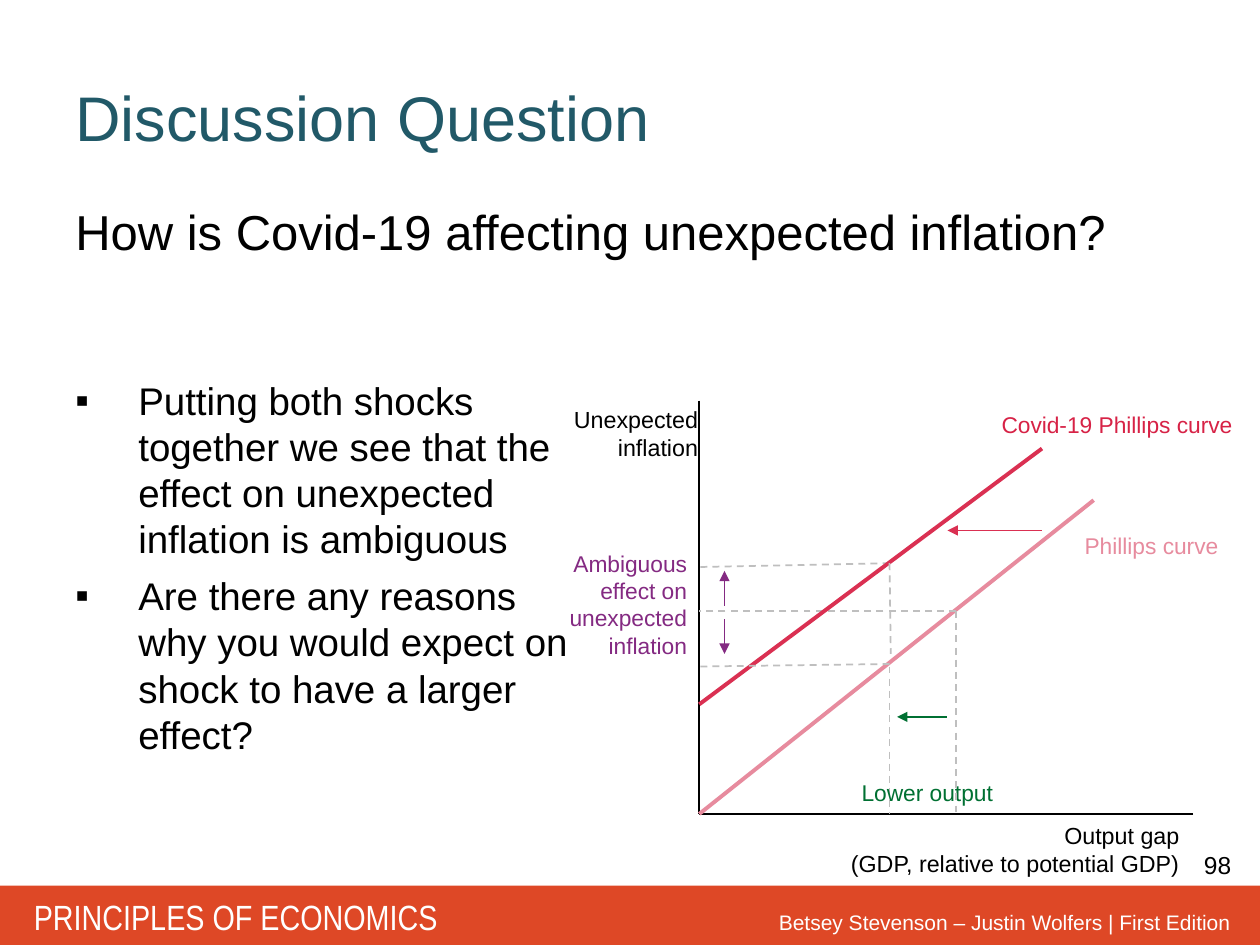
from dataclasses import dataclass
from typing import Optional

from lxml import etree
from pptx import Presentation
from pptx.dml.color import RGBColor
from pptx.enum.dml import MSO_LINE
from pptx.enum.shapes import MSO_CONNECTOR, MSO_SHAPE
from pptx.enum.text import MSO_ANCHOR, PP_ALIGN
from pptx.oxml.ns import qn
from pptx.util import Emu, Inches, Pt

LEFT, RIGHT = PP_ALIGN.LEFT, PP_ALIGN.RIGHT
TOP, MIDDLE = MSO_ANCHOR.TOP, MSO_ANCHOR.MIDDLE
STRAIGHT, RECTANGLE = MSO_CONNECTOR.STRAIGHT, MSO_SHAPE.RECTANGLE
DASH = MSO_LINE.DASH

# The page is a grid of 100 columns by 75 rows.
COLUMNS, ROWS = 100, 75
PAGE_WIDTH, PAGE_HEIGHT = Inches(10), Inches(7.5)

BLACK, WHITE, ORANGE, TEAL = "000000", "FFFFFF", "DE4826", "215968"
CRIMSON, CRIMSON_TEXT, PINK = "DA3052", "D72246", "E78B9E"
GREEN, PURPLE, GREY = "007032", "842A82", "BFBFBF"

# Graph positions, in columns and rows
AXIS_X, AXIS_Y = 55.5, 64.6
LOW_OUTPUT, OLD_OUTPUT = 70.6, 75.9
HIGH_INFLATION, OLD_INFLATION, LOW_INFLATION = 44.7, 48.5, 52.7
ARROW_X = 57.5


@dataclass
class Label:
    column: float
    row: float
    width: float
    height: float
    paragraphs: tuple[str, ...]
    size: float = 13
    color: str = BLACK
    align: PP_ALIGN = LEFT
    anchor: MSO_ANCHOR = TOP
    font: str = "Arial"
    bullet: Optional[str] = None
    right_inset: float = 1


@dataclass
class Line:
    start: tuple[float, float]
    end: tuple[float, float]
    color: str = BLACK
    weight: float = 1
    dashed: bool = False
    arrow: bool = False


def across(columns: float) -> Emu:
    return Emu(round(PAGE_WIDTH * columns / COLUMNS))


def down(rows: float) -> Emu:
    return Emu(round(PAGE_HEIGHT * rows / ROWS))


def rgb(color: str) -> RGBColor:
    return RGBColor.from_string(color)


def add_bullet(para, symbol: str) -> None:
    properties = para._p.get_or_add_pPr()
    properties.set("marL", str(Inches(0.5)))
    properties.set("indent", str(-Inches(0.5)))
    etree.SubElement(properties, qn("a:buFont"), typeface="Arial")
    etree.SubElement(properties, qn("a:buChar"), char=symbol)


def draw_label(page, label: Label) -> None:
    box = page.shapes.add_textbox(across(label.column), down(label.row),
                                  across(label.width), down(label.height))
    frame = box.text_frame
    frame.word_wrap = True
    frame.vertical_anchor = label.anchor
    frame.margin_right = across(label.right_inset)
    for index, text in enumerate(label.paragraphs):
        para = frame.add_paragraph() if index else frame.paragraphs[0]
        para.alignment = label.align
        if label.bullet:
            if index:
                para.space_before = Pt(6.2)
            add_bullet(para, label.bullet)
        span = para.add_run()
        span.text = text
        span.font.name = label.font
        span.font.size = Pt(label.size)
        span.font.color.rgb = rgb(label.color)


def draw_line(page, line: Line) -> None:
    """Draw a straight line; an arrow has its head at the start."""
    connector = page.shapes.add_connector(
        STRAIGHT, across(line.start[0]), down(line.start[1]),
        across(line.end[0]), down(line.end[1]))
    connector.line.color.rgb = rgb(line.color)
    connector.line.width = Pt(line.weight)
    if line.dashed:
        connector.line.dash_style = DASH
    if line.arrow:
        etree.SubElement(connector.line._get_or_add_ln(), qn("a:headEnd"),
                         type="triangle")
    etree.SubElement(connector._element.spPr, qn("a:effectLst"))


def draw_footer_band(page) -> None:
    band = page.shapes.add_shape(RECTANGLE, 0, down(70.3), PAGE_WIDTH, down(4.7))
    band.shadow.inherit = False
    band.fill.solid()
    band.fill.fore_color.rgb = rgb(ORANGE)
    band.line.fill.background()


def guide(start: tuple[float, float], end: tuple[float, float]) -> Line:
    return Line(start, end, GREY, dashed=True)


def arrow(start: tuple[float, float], end: tuple[float, float], color: str) -> Line:
    return Line(start, end, color, 0.75, arrow=True)


PAGE_TEXT = (
    Label(58.3, 71.7, 41.3, 3, ("Betsey Stevenson – Justin Wolfers | First Edition",),
          12, WHITE, RIGHT, right_inset=1.9),
    Label(1.7, 70.6, 36.9, 4.4, ("PRINCIPLES OF ECONOMICS",), 20, WHITE,
          font="Arial Narrow"),
    Label(89.6, 67, 9.1, 3.4, ("98",), 14, align=RIGHT),
    Label(5, 3, 90, 12.5, ("Discussion Question",), 36, TEAL, anchor=MIDDLE),
    Label(5, 15.5, 90, 6.5, ("How is Covid-19 affecting unexpected inflation?",), 28),
    Label(5, 29.4, 41.6, 40.3, (
        "Putting both shocks together we see that the effect on unexpected "
        "inflation is ambiguous",
        "Are there any reasons why you would expect on shock to have a larger effect?",
    ), 22, bullet="▪"),
)

GRAPH = (
    Line((AXIS_X, 31.8), (AXIS_X, AXIS_Y)),
    Line((94.7, AXIS_Y), (AXIS_X, AXIS_Y)),
    Label(42.8, 31.7, 13.6, 5.5, ("Unexpected inflation",), 13.3, align=RIGHT),
    Label(64.9, 64.7, 29.7, 5.5, ("Output gap", "(GDP, relative to potential GDP)"),
          13.3, align=RIGHT),
    Line((AXIS_X, AXIS_Y), (86.8, 39.7), PINK, 2.25),
    Label(85.1, 41.7, 13.6, 3.2, ("Phillips curve",), color=PINK),
    guide((LOW_OUTPUT, 52.9), (LOW_OUTPUT, AXIS_Y)),
    arrow((71.2, 56.9), (75.2, 56.9), GREEN),
    Label(67.4, 61.3, 13.3, 3.2, ("Lower output",), color=GREEN),
    guide((OLD_OUTPUT, OLD_INFLATION), (OLD_OUTPUT, AXIS_Y)),
    guide((OLD_OUTPUT, OLD_INFLATION), (AXIS_X, OLD_INFLATION)),
    guide((LOW_OUTPUT, HIGH_INFLATION), (AXIS_X, 45)),
    arrow((ARROW_X, 45.3), (ARROW_X, 48.1), PURPLE),
    Label(42.2, 43.1, 13.3, 9.8, ("Ambiguous effect on unexpected inflation",),
          color=PURPLE, align=RIGHT),
    Line((AXIS_X, 55.9), (82.7, 35.6), CRIMSON, 2.25),
    Label(78.5, 32.1, 21.2, 3.2, ("Covid-19 Phillips curve",), color=CRIMSON_TEXT),
    arrow((75.2, 42.1), (82.7, 42.1), CRIMSON),
    guide((LOW_OUTPUT, HIGH_INFLATION), (70.7, 51.9)),
    guide((LOW_OUTPUT, LOW_INFLATION), (AXIS_X, 52.9)),
    arrow((ARROW_X, 51.9), (ARROW_X, 49.1), PURPLE),
)


def main() -> None:
    deck = Presentation()
    deck.slide_width, deck.slide_height = PAGE_WIDTH, PAGE_HEIGHT
    page = deck.slides.add_slide(deck.slide_layouts[6])
    draw_footer_band(page)
    for element in PAGE_TEXT + GRAPH:
        if isinstance(element, Label):
            draw_label(page, element)
        else:
            draw_line(page, element)
    deck.save("out.pptx")


if __name__ == "__main__":
    main()
